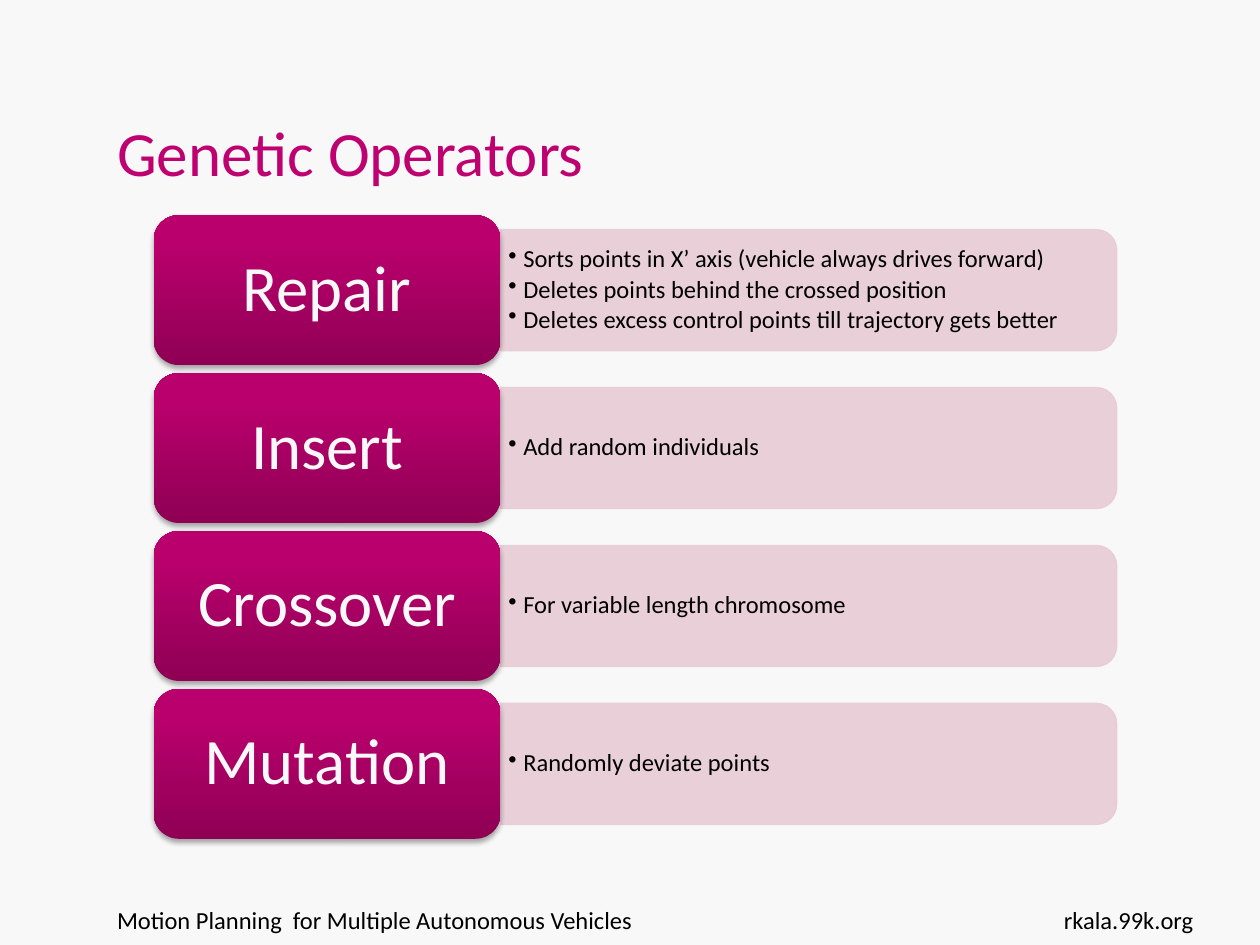
from lxml import etree
from pptx import Presentation
from pptx.dml.color import RGBColor
from pptx.enum import shapes, text
from pptx.oxml import parse_xml
from pptx.oxml.ns import nsdecls, qn
from pptx.util import Cm, Pt

FONT = "Calibri"
MAGENTA, PINK, PAPER, BLACK = "BF0071", "E8CCD5", "F8F8F8", "000000"
LABEL_STOPS = [(0, "8F0054"), (80, "B9006D"), (100, "BA006E")]
OPERATORS = [
    ("Repair", ["Sorts points in X’ axis (vehicle always drives forward)",
                "Deletes points behind the crossed position",
                "Deletes excess control points till trajectory gets better"]),
    ("Insert", ["Add random individuals"]),
    ("Crossover", ["For variable length chromosome"]),
    ("Mutation", ["Randomly deviate points"]),
]


def rgb(value):
    return RGBColor.from_string(value)


def add_bullet(p, indent):
    pPr = p._p.get_or_add_pPr()
    pPr.set("marL", str(indent))
    pPr.set("indent", str(-indent))
    etree.SubElement(pPr, qn("a:buChar")).set("char", "•")


def write(sp, lines, size, color, align="LEFT", anchor="TOP", inset=(0.25, 0.13),
          spacing=None, gap=0, bullet=None):
    tf = sp.text_frame
    tf.word_wrap = True
    tf.auto_size = text.MSO_AUTO_SIZE.NONE
    tf.vertical_anchor = text.MSO_ANCHOR[anchor]
    tf.margin_left = tf.margin_right = Cm(inset[0])
    tf.margin_top = tf.margin_bottom = Cm(inset[1])
    for i, line in enumerate(lines):
        p = tf.add_paragraph() if i else tf.paragraphs[0]
        if bullet:
            add_bullet(p, Cm(bullet))
        p.alignment = text.PP_ALIGN[align]
        p.line_spacing = spacing
        if i and gap:
            p.space_before = Pt(gap)
        r = p.add_run()
        r.text = line
        r.font.name, r.font.size = FONT, Pt(size)
        r.font.color.rgb = rgb(color)


def add_text(slide, x, y, w, h, lines, **fmt):
    write(slide.shapes.add_textbox(Cm(x), Cm(y), Cm(w), Cm(h)), lines, **fmt)


def set_alpha(fill, percent):
    color = fill._xPr.find(qn("a:solidFill"))[0]
    etree.SubElement(color, qn("a:alpha")).set("val", str(percent * 1000))


def add_bar(slide, x, y, w, h):
    # A tall shape turned a quarter, so its rounded end faces right
    sp = slide.shapes.add_shape(shapes.MSO_SHAPE.ROUND_2_SAME_RECTANGLE,
                                Cm(x + (w - h) / 2), Cm(y + (h - w) / 2), Cm(h), Cm(w))
    sp.rotation = 90
    sp.shadow.inherit = False
    sp.line.width = Pt(0.75)
    for fill in (sp.fill, sp.line.fill):
        fill.solid()
        fill.fore_color.rgb = rgb(PINK)
        set_alpha(fill, 90)


def add_label(slide, x, y, w, h, name):
    sp = slide.shapes.add_shape(shapes.MSO_SHAPE.ROUNDED_RECTANGLE, Cm(x), Cm(y), Cm(w), Cm(h))
    sp.line.fill.background()
    sp.shadow.inherit = False
    # Gradient from the dark bottom up, and a soft shadow below
    stops = "".join(f'<a:gs pos="{pos * 1000}"><a:srgbClr val="{c}"/></a:gs>'
                    for pos, c in LABEL_STOPS)
    spPr = sp._element.spPr
    spPr.find(qn("a:prstGeom")).addnext(parse_xml(
        f'<a:gradFill {nsdecls("a")} rotWithShape="1"><a:gsLst>{stops}</a:gsLst>'
        '<a:lin ang="16200000" scaled="0"/></a:gradFill>'))
    spPr.find(qn("a:effectLst")).append(parse_xml(
        f'<a:outerShdw {nsdecls("a")} blurRad="{Pt(3.1)}" dist="{Pt(1.8)}" dir="5400000" '
        f'rotWithShape="0"><a:srgbClr val="{BLACK}"><a:alpha val="35000"/></a:srgbClr>'
        '</a:outerShdw>'))
    write(sp, [name], size=37, color=PAPER, align="CENTER", anchor="MIDDLE",
          inset=(0.38, 0.2), spacing=0.9)


def add_operator(slide, x, y, w, h, name, points):
    label_w, bar_h, text_h = 6.99, 2.44, 2.18
    bar_x, bar_w = x + label_w, w - label_w
    add_bar(slide, bar_x, y + (h - bar_h) / 2, bar_w, bar_h)
    add_text(slide, bar_x, y + (h - text_h) / 2, bar_w - 0.12, text_h, points,
             size=14, color=BLACK, anchor="MIDDLE", inset=(0.16, 0.08),
             spacing=0.9, gap=2.1, bullet=0.3)
    add_label(slide, x, y, label_w, h, name)


def add_operators(slide, x, y, w, h):
    row_h = 3.02
    pitch = (h - row_h) / (len(OPERATORS) - 1)
    for i, (name, points) in enumerate(OPERATORS):
        add_operator(slide, x, y + i * pitch, w, row_h, name, points)


def add_title(slide, x, y, w, h, title):
    sp = slide.shapes.title
    sp.left, sp.top, sp.width, sp.height = Cm(x), Cm(y), Cm(w), Cm(h)
    write(sp, [title], size=36, color=MAGENTA, anchor="BOTTOM")


def add_footer(slide, x, y, w, h):
    link_w = 3.81
    add_text(slide, x, y, 17.6, h, ["Motion Planning  for Multiple Autonomous Vehicles"],
             size=14, color=BLACK)
    add_text(slide, x + w - link_w, y, link_w, h, ["rkala.99k.org"],
             size=14, color=BLACK, align="RIGHT")


def main():
    prs = Presentation()
    prs.slide_width, prs.slide_height = Cm(25.4), Cm(19.05)
    slide = prs.slides.add_slide(prs.slide_layouts[5])
    slide.background.fill.solid()
    slide.background.fill.fore_color.rgb = rgb(PAPER)
    add_title(slide, 2.11, 0.76, 17.2, 3.18, "Genetic Operators")
    add_operators(slide, 3.1, 4.34, 19.41, 12.57)
    add_footer(slide, 2.11, 18.11, 22.2, 1.32)
    prs.save("out.pptx")


if __name__ == "__main__":
    main()
